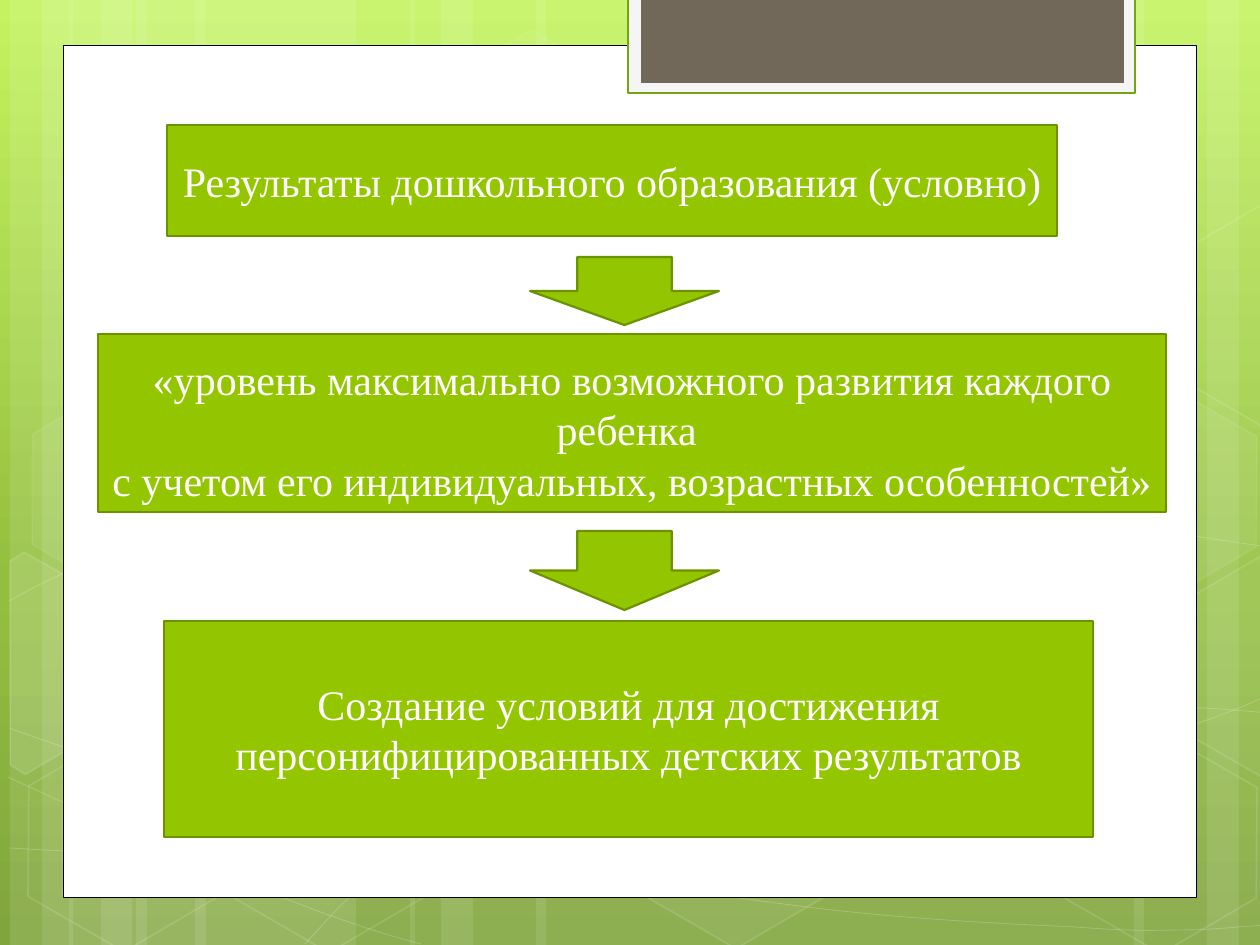
from lxml import etree
from copy import deepcopy
from pptx import Presentation
from pptx.dml.color import RGBColor
from pptx.enum.shapes import MSO_SHAPE
from pptx.enum.text import MSO_ANCHOR, PP_ALIGN
from pptx.oxml.ns import qn
from pptx.util import Pt

RECT, HEXAGON, ARROW = MSO_SHAPE.RECTANGLE, MSO_SHAPE.HEXAGON, MSO_SHAPE.DOWN_ARROW
MIDDLE, CENTER = MSO_ANCHOR.MIDDLE, PP_ALIGN.CENTER
PX = 914400 / 126
WHITE = RGBColor(0xFF, 0xFF, 0xFF)
BLACK = RGBColor(0, 0, 0)
PALE = RGBColor(0xF5, 0xF5, 0xF5)
BROWN = RGBColor(0x71, 0x68, 0x5A)
GREEN = RGBColor(0x94, 0xC6, 0x00)
EDGE = RGBColor(0x6D, 0x92, 0x00)
RIM = RGBColor(0x74, 0xA5, 0x10)
SKY = [(0, RGBColor(0xC3, 0xF3, 0x5F)), (62, RGBColor(0x93, 0xBF, 0x3F)),
       (100, RGBColor(0x81, 0xA5, 0x3E))]

deck = Presentation()
deck.slide_width, deck.slide_height = round(1260 * PX), round(945 * PX)
slide = deck.slides.add_slide(deck.slide_layouts[6])
shapes = slide.shapes


def paint(shape, fill=None, line=None, width=1, alpha=100, fade=100):
    """Set fill and line; alpha and fade are their opacities in percent."""
    shape.shadow.inherit = False
    shape.line.width = Pt(width)
    shown = []
    for part, color, level in ((shape.fill, fill, alpha), (shape.line.fill, line, fade)):
        if color is None:
            part.background()
        else:
            part.solid()
            part.fore_color.rgb = color
            shown.append(level)
    for tag, level in zip(shape._element.spPr.iter(qn("a:srgbClr")), shown):
        if level < 100:
            etree.SubElement(tag, qn("a:alpha")).set("val", str(level * 1000))


def place(kind, *box):
    return shapes.add_shape(kind, *[round(n * PX) for n in box])


# Background gradient
back = slide.background.fill
back.gradient()
back.gradient_angle = 270
stops = slide._element.find(".//" + qn("a:gsLst"))
stops.append(deepcopy(stops[0]))
for stop, (pos, color) in zip(back.gradient_stops, SKY):
    stop.position = pos / 100
    stop.color.rgb = color

# Vertical light bands
for left, width in [(136, 220), (10, 63), (42, 105), (195, 220), (69, 63), (101, 105),
                    (924, 220), (1207, 63), (1134, 105), (536, 388), (410, 63), (441, 105)]:
    paint(place(RECT, left, 0, width, 945), WHITE, alpha=10)

# Thin curves: a start point, then three Bezier points for each segment
curves = [
    [(9, 848), (77, 852), (145, 856), (239, 854), (334, 853), (451, 850), (577, 838),
     (703, 825), (882, 801), (998, 777), (1113, 753), (1231, 716), (1269, 694)],
    [(9, 601), (45, 581), (82, 562), (152, 543), (224, 524), (326, 496), (437, 488),
     (549, 479), (685, 478), (824, 488), (963, 498), (1193, 537), (1269, 547)],
    [(8, 777), (160, 847), (311, 916), (421, 944)],
    [(9, 728), (48, 742), (88, 756), (161, 776), (234, 795), (344, 827), (450, 848),
     (554, 869), (687, 892), (791, 905), (896, 919), (1008, 924), (1075, 927),
     (1140, 932), (1158, 930), (1191, 930), (1223, 929), (1246, 926), (1269, 925)],
    [(305, 944), (328, 919), (350, 893), (381, 871), (411, 849), (454, 823), (489, 805),
     (524, 788), (546, 780), (592, 767), (638, 755), (722, 737), (766, 728),
     (811, 719), (818, 719), (857, 717), (896, 713), (958, 709), (1000, 708),
     (1045, 707), (1116, 708), (1116, 708), (1144, 708), (1173, 708), (1201, 708),
     (1223, 709), (1245, 711), (1256, 712), (1268, 713), (1264, 712), (1268, 713)],
]
for nodes in curves:
    pen = shapes.build_freeform(*nodes[0], scale=PX)
    pen.add_line_segments(nodes[1:], close=False)
    curve = pen.convert_to_shape()
    route = next(curve._element.iter(qn("a:path")))
    legs = route.findall(qn("a:lnTo"))
    for i in range(0, len(legs), 3):
        bend = etree.SubElement(route, qn("a:cubicBezTo"))
        for leg in legs[i:i + 3]:
            bend.append(leg[0])
            route.remove(leg)
    paint(curve, line=WHITE, width=0.5, fade=20)

# Hexagons: left, top, fill opacity, line opacity
for left, top, alpha, fade in [
        (421, 45, 4, 8), (626, 742, 6, 12), (14, 745, 0, 12), (18, 393, 7, 8),
        (219, 746, 0, 12), (949, 571, 10, 12), (1051, 747, 0, 12), (1051, 396, 7, 8)]:
    cell = place(HEXAGON, left, top, 220, 192)
    cell.adjustments[0] = 0.285
    cell.rotation = 30
    paint(cell, WHITE if alpha else None, WHITE, 1, alpha, fade)

# Hexagons cut by the slide edge, before their turn
right = [(1155, 303), (1209, 208), (1221, 208), (1326, 390), (1321, 399), (1210, 399)]
for alpha, nodes in [
        (10, [(-42, 594), (-34, 579), (77, 578), (132, 675), (78, 771), (60, 770)]),
        (4, [(x, y + 351) for x, y in right]),
        (0, right)]:
    pen = shapes.build_freeform(*nodes[0], scale=PX)
    pen.add_line_segments(nodes[1:], close=True)
    cell = pen.convert_to_shape()
    cell.rotation = 30
    paint(cell, WHITE if alpha else None, WHITE, 1, alpha, 12)

# White page and the tab at its top
paint(place(RECT, 63, 45, 1134, 853), WHITE, BLACK, 0.5)
paint(place(RECT, 628, -2, 507, 95), PALE, RIM, 1.25)
paint(place(RECT, 641, -2, 483, 85), BROWN)

# Flow of boxes and arrows
boxes = [
    ((167, 125, 890, 111), ["Результаты дошкольного образования (условно) "]),
    ((98, 334, 1068, 178), ["«уровень максимально возможного развития каждого ребенка ",
                            "с учетом его индивидуальных, возрастных особенностей» "]),
    ((164, 621, 929, 216),
     ["Создание условий для достижения персонифицированных детских результатов"]),
]
arrows = [(257, 68), (531, 79)]
for i, (box, lines) in enumerate(boxes):
    card = place(RECT, *box)
    paint(card, GREEN, EDGE, 1.25)
    frame = card.text_frame
    frame.word_wrap = True
    frame.vertical_anchor = MIDDLE
    if len(lines) > 1:
        frame.margin_top, frame.margin_bottom = round(12 * PX), 0
    frame.text = "\n".join(lines)
    for para in frame.paragraphs:
        para.alignment = CENTER
        for run in para.runs:
            run.font.size = Pt(24)
            run.font.name = "Times New Roman"
            run.font.color.rgb = WHITE
    for top, height in arrows[i:i + 1]:
        paint(place(ARROW, 530, top, 189, height), GREEN, EDGE, 1.25)

deck.save("out.pptx")
